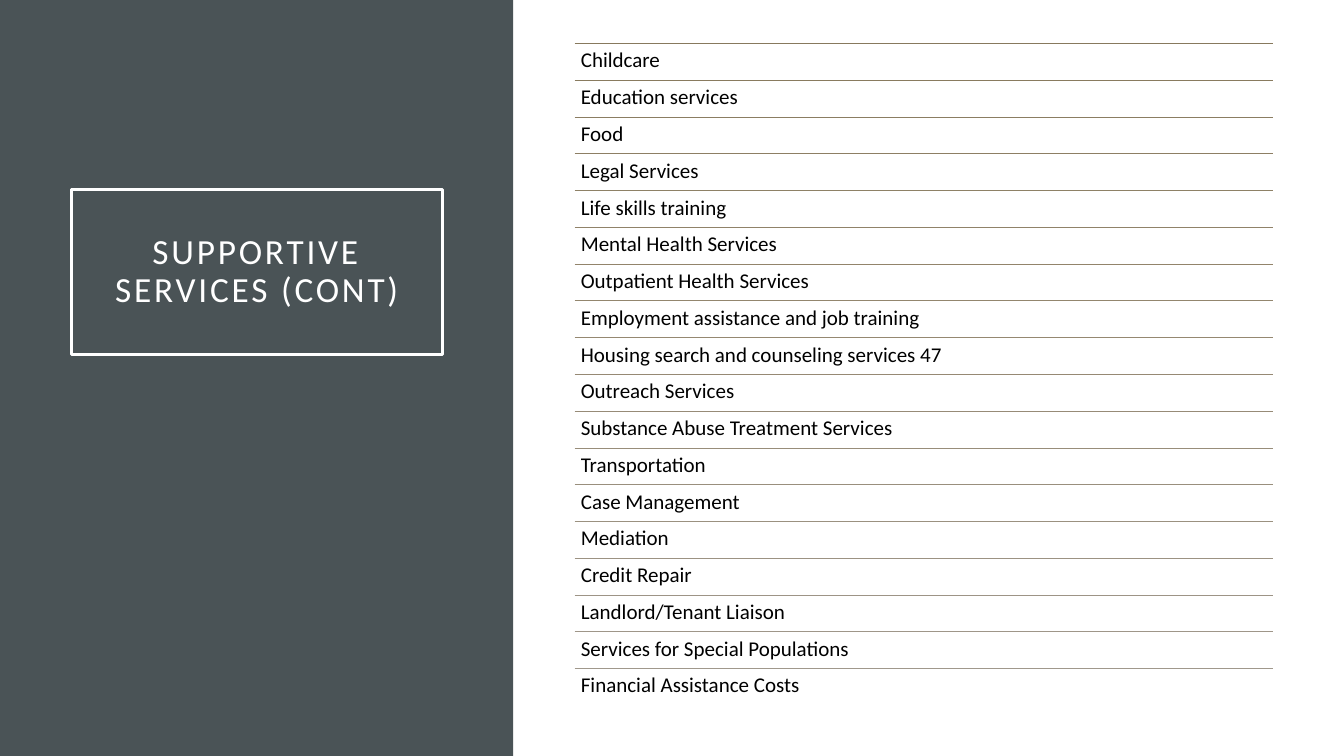
from lxml.etree import SubElement
from pptx import Presentation
from pptx.dml.color import RGBColor
from pptx.enum.shapes import MSO_CONNECTOR, MSO_SHAPE
from pptx.enum.text import MSO_ANCHOR, PP_ALIGN
from pptx.oxml.ns import qn
from pptx.util import Pt

TITLE = "SUPPORTIVE SERVICES (CONT)"
SERVICES = [
    ("Childcare", "87795D"),
    ("Education services", "897B5F"),
    ("Food", "8B7D62"),
    ("Legal Services", "8D7F64"),
    ("Life skills training", "8E8166"),
    ("Mental Health Services", "908269"),
    ("Outpatient Health Services", "92846B"),
    ("Employment assistance and job training", "93866E"),
    ("Housing search and counseling services 47", "958871"),
    ("Outreach Services", "968974"),
    ("Substance Abuse Treatment Services", "978B77"),
    ("Transportation", "988D7A"),
    ("Case Management", "998F7D"),
    ("Mediation", "9B9180"),
    ("Credit Repair", "9C9283"),
    ("Landlord/Tenant Liaison", "9D9486"),
    ("Services for Special Populations", "9F9689"),
    ("Financial Assistance Costs", "A0988C"),
]
SLIDE_WIDTH, SLIDE_HEIGHT = 960, 540
PANEL_WIDTH = 366.5
TITLE_BOX = (51, 135.3, 265, 118)
LIST_LEFT, LIST_TOP, LIST_WIDTH = 410.4, 31.1, 499
ROW_HEIGHT = 26.26


def color(hex_value):
    return RGBColor.from_string(hex_value)


def add_rectangle(slide, left, top, width, height):
    shape = slide.shapes.add_shape(
        MSO_SHAPE.RECTANGLE, Pt(left), Pt(top), Pt(width), Pt(height))
    shape.shadow.inherit = False
    return shape


def write_text(shape, text, size, hex_value, inset, anchor, alignment):
    frame = shape.text_frame
    frame.word_wrap = True
    frame.vertical_anchor = anchor
    frame.margin_left = frame.margin_right = Pt(inset)
    frame.margin_top = frame.margin_bottom = Pt(inset)
    paragraph = frame.paragraphs[0]
    paragraph.alignment = alignment
    paragraph.line_spacing = 0.9
    run = paragraph.add_run()
    run.text = text
    run.font.name = "Calibri"
    run.font.size = Pt(size)
    run.font.color.rgb = color(hex_value)
    return run


def add_panel(slide):
    panel = add_rectangle(slide, 0, 0, PANEL_WIDTH, SLIDE_HEIGHT)
    panel.fill.solid()
    panel.fill.fore_color.rgb = color("4A5356")
    panel.line.fill.background()


def add_title(slide):
    title = add_rectangle(slide, *TITLE_BOX)
    title.fill.background()
    title.line.color.rgb = color("FFFFFF")
    title.line.width = Pt(2.5)
    run = write_text(title, TITLE, 25.2, "FFFFFF", 14.4,
                     MSO_ANCHOR.MIDDLE, PP_ALIGN.CENTER)
    run.font._element.set("spc", "200")


def add_services(slide):
    group = slide.shapes.add_group_shape()
    for index, (service, rule_color) in enumerate(SERVICES):
        top = Pt(LIST_TOP + index * ROW_HEIGHT)
        rule = group.shapes.add_connector(
            MSO_CONNECTOR.STRAIGHT,
            Pt(LIST_LEFT), top, Pt(LIST_LEFT + LIST_WIDTH), top)
        rule.line.color.rgb = color(rule_color)
        rule.line.width = Pt(0.5)
        SubElement(rule._element.spPr, qn("a:effectLst"))
        row = group.shapes.add_textbox(
            Pt(LIST_LEFT), top, Pt(LIST_WIDTH), Pt(ROW_HEIGHT))
        write_text(row, service, 15, "000000", 4.5,
                   MSO_ANCHOR.TOP, PP_ALIGN.LEFT)


def main():
    presentation = Presentation()
    presentation.slide_width = Pt(SLIDE_WIDTH)
    presentation.slide_height = Pt(SLIDE_HEIGHT)
    slide = presentation.slides.add_slide(presentation.slide_layouts[6])
    add_panel(slide)
    add_title(slide)
    add_services(slide)
    presentation.save("out.pptx")


if __name__ == "__main__":
    main()
